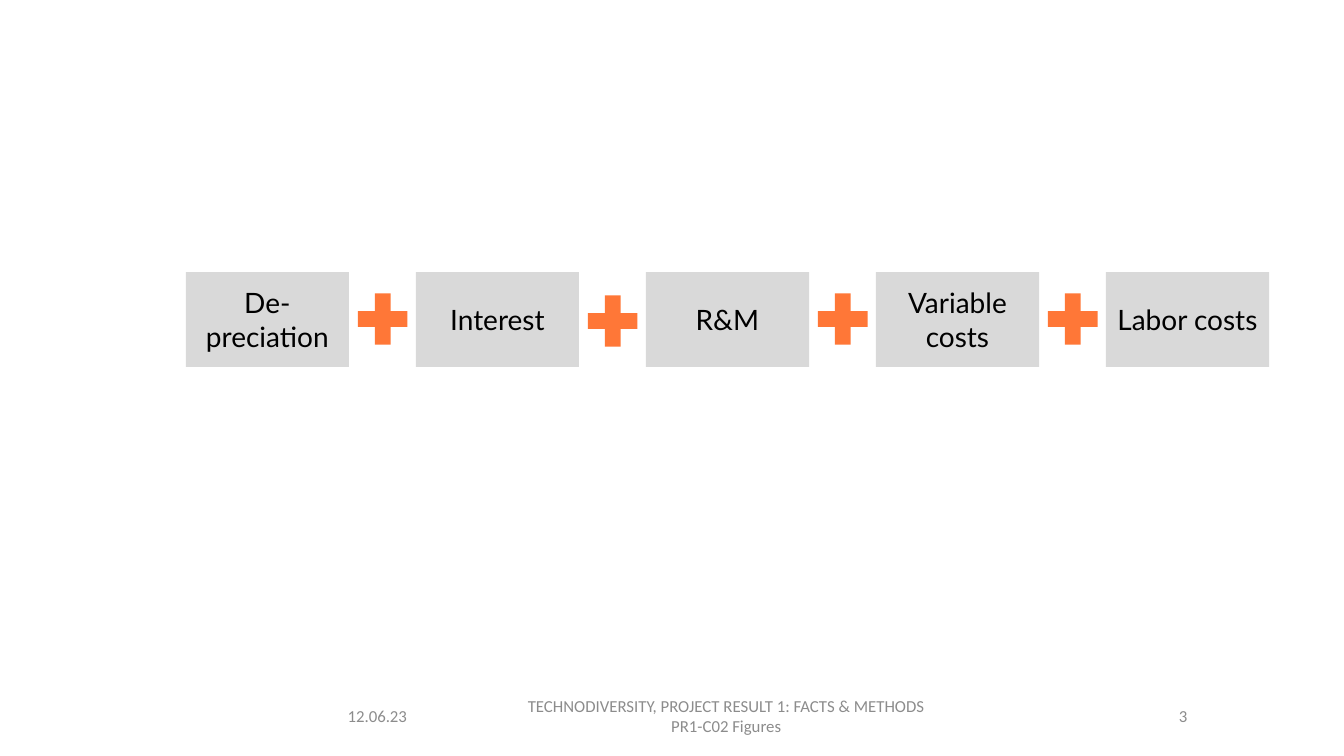
from pptx import Presentation
from pptx.dml.color import RGBColor
from pptx.enum.shapes import MSO_SHAPE
from pptx.enum.text import MSO_ANCHOR, PP_ALIGN
from pptx.util import Pt

BLACK = RGBColor(0x00, 0x00, 0x00)
GRAY = RGBColor(0x8C, 0x8C, 0x8C)
SILVER = RGBColor(0xD9, 0xD9, 0xD9)
ORANGE = RGBColor(0xFF, 0x77, 0x37)

deck = Presentation()
deck.slide_width = Pt(960)
deck.slide_height = Pt(540)
slide = deck.slides.add_slide(deck.slide_layouts[6])


def add_part(kind, left, top, width, height, color):
    part = slide.shapes.add_shape(kind, Pt(left), Pt(top), Pt(width), Pt(height))
    part.shadow.inherit = False
    part.fill.solid()
    part.fill.fore_color.rgb = color
    part.line.fill.background()
    return part


def set_text(shape, text, font, size, color, align):
    frame = shape.text_frame
    frame.word_wrap = True
    frame.vertical_anchor = MSO_ANCHOR.MIDDLE
    frame.text = text
    for line in frame.paragraphs:
        line.alignment = align
        for run in line.runs:
            run.font.name = font
            run.font.size = Pt(size)
            run.font.color.rgb = color


footer = [
    ("12.06.23", 241.2, 96.5, PP_ALIGN.LEFT),
    ("TECHNODIVERSITY, PROJECT RESULT 1: FACTS & METHODS\nPR1-C02 Figures",
     349.9, 337.7, PP_ALIGN.CENTER),
    ("3", 703.4, 151.9, PP_ALIGN.RIGHT),
]
for text, left, width, align in footer:
    box = slide.shapes.add_textbox(Pt(left), Pt(496.8), Pt(width), Pt(28.8))
    set_text(box, text, "Calibri", 12, GRAY, align)

START, PITCH, WIDTH = 132.7, 164.3, 116.6
costs = ["De-preciation", "Interest", "R&M", "Variable costs", "Labor costs"]
for i, cost in enumerate(costs):
    box = add_part(MSO_SHAPE.RECTANGLE, START + i * PITCH, 194.4, WIDTH, 67.7, SILVER)
    box.text_frame.margin_left = box.text_frame.margin_right = Pt(4)
    set_text(box, cost, "Lato", 20, BLACK, PP_ALIGN.CENTER)

for i, top in enumerate([203, 204.5, 203, 203]):
    add_part(MSO_SHAPE.MATH_PLUS, START + WIDTH + i * PITCH, top, 48.2, 49.7, ORANGE)

deck.save("out.pptx")
